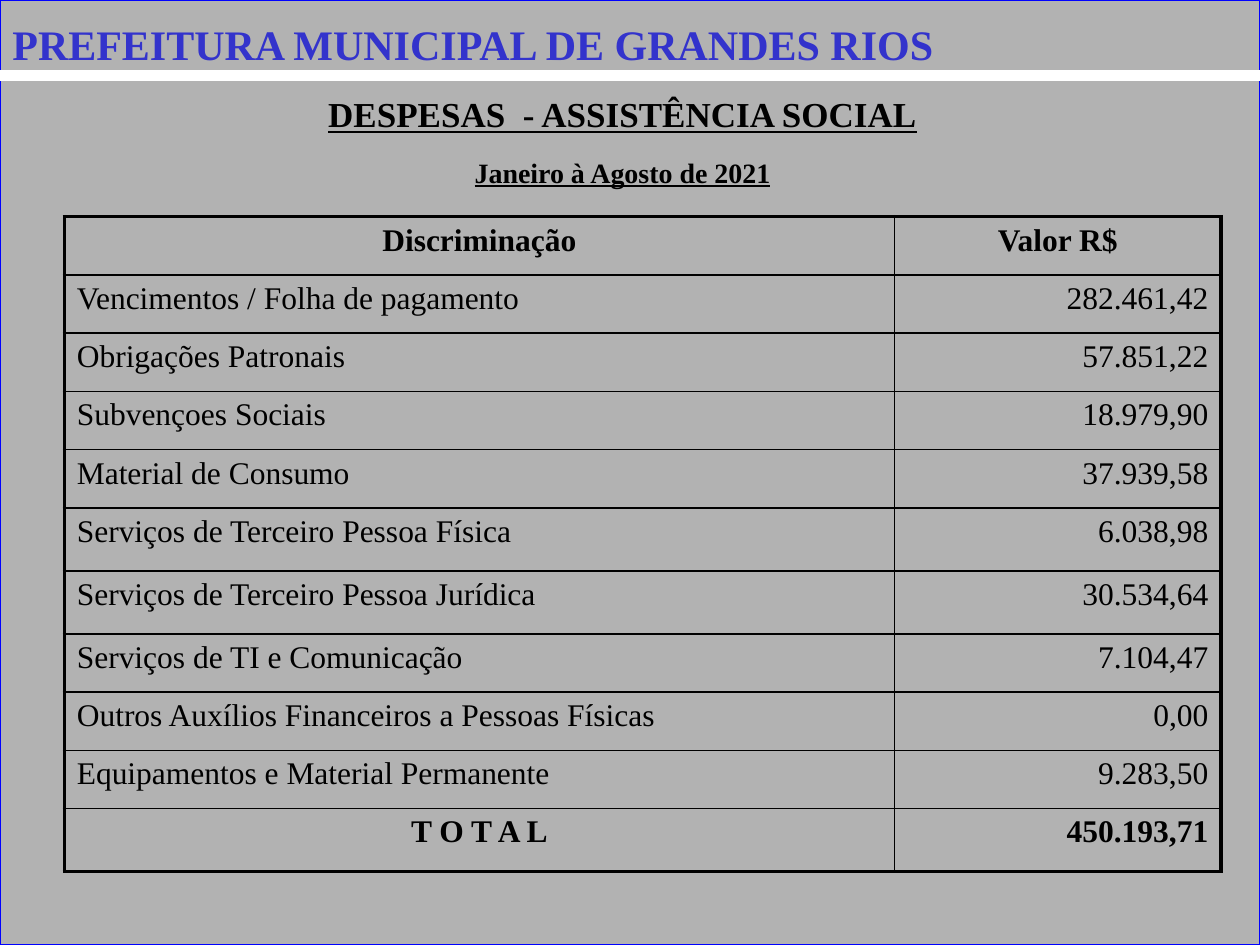
"""Builds the social assistance expenses slide."""
from lxml.etree import SubElement
from pptx import Presentation
from pptx.dml.color import RGBColor
from pptx.enum.shapes import MSO_CONNECTOR as Connector, MSO_SHAPE as Shape
from pptx.enum.text import PP_ALIGN as Align
from pptx.oxml.ns import qn
from pptx.util import Pt

FONT = "Times New Roman"
HEADING = "PREFEITURA MUNICIPAL DE GRANDES RIOS"
TOPIC = "DESPESAS  - ASSISTÊNCIA SOCIAL"
PERIOD = "Janeiro à Agosto de 2021"
EXPENSES = [
    ("Discriminação", "Valor R$"),
    ("Vencimentos / Folha de pagamento", "282.461,42"),
    ("Obrigações Patronais", "57.851,22"),
    ("Subvençoes Sociais", "18.979,90"),
    ("Material de Consumo", "37.939,58"),
    ("Serviços de Terceiro Pessoa Física", "6.038,98"),
    ("Serviços de Terceiro Pessoa Jurídica", "30.534,64"),
    ("Serviços de TI e Comunicação", "7.104,47"),
    ("Outros Auxílios Financeiros a Pessoas Físicas", "0,00"),
    ("Equipamentos e Material Permanente", "9.283,50"),
    ("T O T A L", "450.193,71"),
]
COLUMN_WIDTHS = (474.5, 186.5)
ROW_HEIGHT, TALL_ROW_HEIGHT = 33.3, 36
TALL_ROWS = (5, 6, 10)


def color(value):
    """Returns the colour for a hex string."""
    return RGBColor.from_string(value)


def write(paragraph, text, size=18, ink="000000", bold=True, underline=False,
          align=Align.LEFT, spacing=None, before=None, shadow=False):
    """Adds formatted text to a paragraph."""
    paragraph.alignment = align
    if spacing:
        paragraph.line_spacing = spacing
    if before is not None:
        paragraph.space_before = Pt(before)
    run = paragraph.add_run()
    run.text = text
    font = run.font
    font.name, font.size, font.bold, font.underline = FONT, Pt(size), bold, underline
    font.color.rgb = color(ink)
    if shadow:
        effects = font.fill._xPr.makeelement(qn("a:effectLst"))
        font.fill._xPr.find(qn("a:solidFill")).addnext(effects)
        outer = SubElement(effects, qn("a:outerShdw"), dist="35921", dir="2700000")
        SubElement(outer, qn("a:srgbClr"), val="808080")


def add_text_frame(slide, left, top, width, height):
    """Adds a wrapping text box and returns its frame."""
    frame = slide.shapes.add_textbox(Pt(left), Pt(top), Pt(width), Pt(height)).text_frame
    frame.word_wrap = True
    return frame


def set_borders(cell, widths):
    """Draws the left, right, top and bottom borders of a cell."""
    properties = cell._tc.get_or_add_tcPr()
    for position, (side, width) in enumerate(zip("LRTB", widths)):
        line = properties.makeelement(qn(f"a:ln{side}"), w=str(Pt(width)))
        fill = SubElement(line, qn("a:solidFill"))
        SubElement(fill, qn("a:srgbClr"), val="000000")
        properties.insert(position, line)


def add_expenses(slide):
    """Adds the table of expenses."""
    last = len(EXPENSES) - 1
    heights = [TALL_ROW_HEIGHT if r in TALL_ROWS else ROW_HEIGHT for r in range(last + 1)]
    table = slide.shapes.add_table(len(EXPENSES), 2, Pt(36.7), Pt(123.8),
                                   Pt(sum(COLUMN_WIDTHS)), Pt(sum(heights))).table
    for column, width in zip(table.columns, COLUMN_WIDTHS):
        column.width = Pt(width)
    for r, (entry, height) in enumerate(zip(EXPENSES, heights)):
        table.rows[r].height = Pt(height)
        summary = r in (0, last)
        aligns = (Align.CENTER if summary else Align.LEFT,
                  Align.CENTER if r == 0 else Align.RIGHT)
        for c, (text, align) in enumerate(zip(entry, aligns)):
            cell = table.cell(r, c)
            cell.fill.background()
            outer_edges = (c == 0, c == 1, r == 0, r == last)
            set_borders(cell, [2.25 if outer else 1 for outer in outer_edges])
            write(cell.text_frame.paragraphs[0], text, bold=summary, align=align)


def main():
    """Builds and saves the presentation."""
    deck = Presentation()
    deck.slide_width, deck.slide_height = Pt(720), Pt(540)
    slide = deck.slides.add_slide(deck.slide_layouts[6])

    backdrop = slide.shapes.add_shape(Shape.RECTANGLE, 0, 0, Pt(720), Pt(540))
    backdrop.shadow.inherit = False
    backdrop.fill.solid()
    backdrop.fill.fore_color.rgb = color("B2B2B2")
    backdrop.line.color.rgb = color("0000FF")
    backdrop.line.width = Pt(0.75)

    divider = slide.shapes.add_connector(Connector.STRAIGHT, 0, Pt(43.2), Pt(720), Pt(43.2))
    divider.line.color.rgb = color("FFFFFF")
    divider.line.width = Pt(6)
    SubElement(divider._element.spPr, qn("a:effectLst"))

    titles = add_text_frame(slide, 64.8, 37.5, 581.8, 117.4)
    title_format = dict(underline=True, align=Align.CENTER, spacing=1.5, before=2)
    write(titles.paragraphs[0], TOPIC, size=20, **title_format)
    write(titles.add_paragraph(), PERIOD, size=16, **title_format)

    add_expenses(slide)

    heading = add_text_frame(slide, 0, 7.2, 683.3, 36)
    write(heading.paragraphs[0], HEADING, size=24, ink="3333CC", shadow=True)

    deck.save("out.pptx")


if __name__ == "__main__":
    main()
